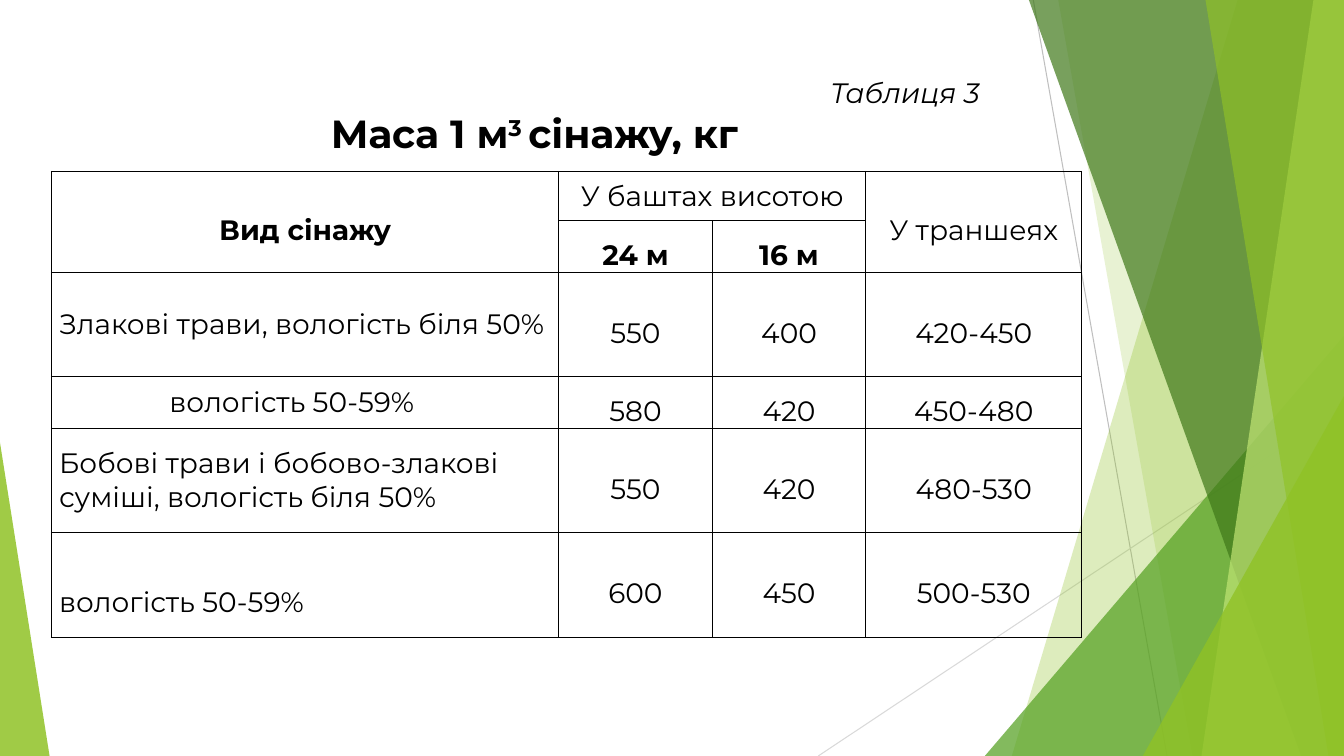
from lxml.etree import SubElement
from pptx import Presentation
from pptx.dml.color import RGBColor
from pptx.enum.shapes import MSO_CONNECTOR, MSO_SHAPE
from pptx.enum.text import MSO_ANCHOR, PP_ALIGN
from pptx.oxml.ns import qn
from pptx.util import Cm, Pt

WIDTH, HEIGHT = 33.87, 19.05


def color(hex_string):
    return RGBColor.from_string(hex_string)


def apply_format(target, values):
    for name, value in values.items():
        setattr(target, name, value)


class SlideBuilder:
    font = {"name": "Montserrat", "size": Pt(20), "bold": False}
    text_color = "000000"
    label_format = {"alignment": PP_ALIGN.LEFT}
    value_format = {"alignment": PP_ALIGN.CENTER, "line_spacing": 1.5, "space_after": Pt(10)}
    cell_format = {"vertical_anchor": MSO_ANCHOR.MIDDLE, "margin_left": Cm(0.19),
                   "margin_right": Cm(0.19), "margin_top": 0, "margin_bottom": 0}

    def __init__(self, presentation):
        self.slide = presentation.slides.add_slide(presentation.slide_layouts[6])

    def line(self, start, end, line_color):
        points = [Cm(value) for value in (*start, *end)]
        connector = self.slide.shapes.add_connector(MSO_CONNECTOR.STRAIGHT, *points)
        connector.line.color.rgb = color(line_color)
        connector.line.width = Pt(0.75)
        SubElement(connector._element.spPr, qn("a:effectLst"))

    def paint(self, shape, fill_color, opacity):
        shape.shadow.inherit = False
        shape.line.fill.background()
        shape.fill.solid()
        shape.fill.fore_color.rgb = color(fill_color)
        tone = shape._element.spPr.find(qn("a:solidFill"))[0]
        SubElement(tone, qn("a:alpha"), val=str(opacity * 1000))

    def band(self, top_x, bottom_x, fill_color, opacity):
        """A full-height band that reaches the right edge of the slide."""
        builder = self.slide.shapes.build_freeform(Cm(top_x), 0)
        corners = [(WIDTH, 0), (WIDTH, HEIGHT), (bottom_x, HEIGHT)]
        builder.add_line_segments([(Cm(x), Cm(y)) for x, y in corners])
        self.paint(builder.convert_to_shape(), fill_color, opacity)

    def triangle(self, left, top, width, apex, fill_color, opacity):
        """A right triangle that stands on the bottom edge of the slide."""
        shape = self.slide.shapes.add_shape(
            MSO_SHAPE.ISOSCELES_TRIANGLE, Cm(left), Cm(top), Cm(width), Cm(HEIGHT - top))
        shape.adjustments[0] = apex
        self.paint(shape, fill_color, opacity)

    def run(self, paragraph, text, baseline=0, **values):
        run = paragraph.add_run()
        run.text = text
        apply_format(run.font, {**self.font, **values})
        run.font.color.rgb = color(self.text_color)
        if baseline:
            run._r.get_or_add_rPr().set("baseline", str(baseline * 1000))

    def text_box(self, left, top, width, height, paragraphs):
        shape = self.slide.shapes.add_textbox(Cm(left), Cm(top), Cm(width), Cm(height))
        frame = shape.text_frame
        apply_format(frame, {"word_wrap": True, "vertical_anchor": MSO_ANCHOR.TOP,
                             "margin_left": Cm(0.47)})
        for index, (alignment, runs) in enumerate(paragraphs):
            paragraph = frame.add_paragraph() if index else frame.paragraphs[0]
            paragraph.alignment = alignment
            for text, values in runs:
                self.run(paragraph, text, **values)

    def border(self, cell):
        properties = cell._tc.get_or_add_tcPr()
        for side in ("lnL", "lnR", "lnT", "lnB"):
            edge = SubElement(properties, qn(f"a:{side}"), w=str(Pt(1)))
            fill = SubElement(edge, qn("a:solidFill"))
            SubElement(fill, qn("a:srgbClr"), val=self.text_color)

    def table(self, left, top, widths, heights, rows, merges, bold, single, margins):
        frame = self.slide.shapes.add_table(
            len(heights), len(widths), Cm(left), Cm(top), Cm(sum(widths)), Cm(sum(heights)))
        table = frame.table
        apply_format(table, {"first_row": False, "horz_banding": False})
        for column, width in zip(table.columns, widths):
            column.width = Cm(width)
        for row, height in zip(table.rows, heights):
            row.height = Cm(height)
        for first, last in merges:
            table.cell(*first).merge(table.cell(*last))
        for i, texts in enumerate(rows):
            for j, text in enumerate(texts):
                cell = table.cell(i, j)
                self.border(cell)
                cell.fill.background()
                apply_format(cell, {**self.cell_format, **margins.get((i, j), {})})
                if text:
                    paragraph = cell.text_frame.paragraphs[0]
                    label = j == 0 and i > 1
                    apply_format(paragraph, self.label_format if label else self.value_format)
                    if (i, j) in single:
                        paragraph.line_spacing = 1.0
                        paragraph.space_after = 0
                    self.run(paragraph, text, bold=(i, j) in bold)


def main():
    presentation = Presentation()
    apply_format(presentation, {"slide_width": Cm(WIDTH), "slide_height": Cm(HEIGHT)})
    builder = SlideBuilder(presentation)

    # Green facets
    builder.line((26.04, 0), (29.41, HEIGHT), "BFBFBF")
    builder.line((WIDTH, 10.24), (20.62, HEIGHT), "D9D9D9")
    builder.band(31.19, 25.5, "90C226", 30)
    builder.band(26.67, 30.05, "90C226", 20)
    builder.triangle(24.82, 8.46, 9.05, 1, "54A021", 72)
    builder.band(25.93, 32.79, "3F7819", 70)
    builder.band(33.1, 30.28, "C0E474", 70)
    builder.band(30.38, 33.48, "90C226", 65)
    builder.triangle(28.8, 9.98, 5.07, 1, "90C226", 80)
    builder.triangle(0, 11.15, 1.25, 0, "90C226", 85)

    # Silage mass table
    builder.table(
        1.3, 4.32,
        widths=[12.78, 3.87, 3.87, 5.44],
        heights=[1.24, 1.31, 2.62, 1.31, 2.62, 2.64],
        rows=[
            ["Вид сінажу", "У баштах висотою", "", "У траншеях"],
            ["", "24 м", "16 м", ""],
            ["Злакові трави, вологість біля 50%", "550", "400", "420-450"],
            ["вологість 50-59%", "580", "420", "450-480"],
            ["Бобові трави і бобово-злакові суміші, вологість біля 50%", "550", "420", "480-530"],
            ["вологість 50-59%", "600", "450", "500-530"],
        ],
        merges=[((0, 0), (1, 0)), ((0, 1), (0, 2)), ((0, 3), (1, 3))],
        bold={(0, 0), (1, 1), (1, 2)},
        single={(0, 1)},
        margins={(3, 0): {"margin_left": Cm(2.97)}, (5, 0): {"margin_top": Cm(0.86)}},
    )

    # Table number and title
    title = {"size": Pt(28), "bold": True}
    builder.text_box(7.87, 1.78, 17.07, 3.07, [
        (PP_ALIGN.RIGHT, [("Таблиця 3", {"italic": True})]),
        (PP_ALIGN.LEFT, [("Маса 1 м", title), ("3 ", {**title, "baseline": 30}),
                         ("сінажу, кг", title)]),
    ])

    presentation.save("out.pptx")


if __name__ == "__main__":
    main()
